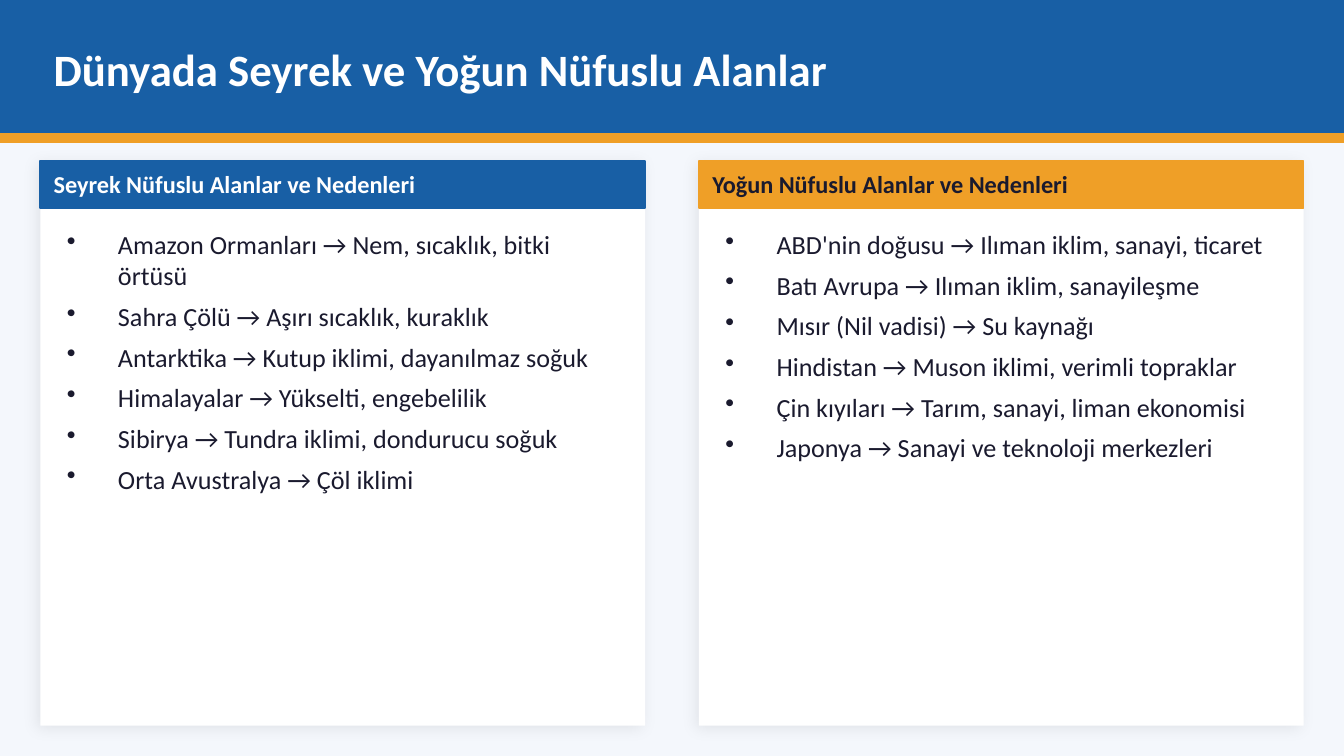
from lxml import etree
from pptx import Presentation
from pptx.dml.color import RGBColor
from pptx.enum.shapes import MSO_SHAPE
from pptx.enum.text import MSO_ANCHOR
from pptx.oxml.ns import qn
from pptx.util import Emu, Inches, Pt

RECTANGLE = MSO_SHAPE.RECTANGLE
MIDDLE = MSO_ANCHOR.MIDDLE

BLUE = RGBColor(0x18, 0x5F, 0xA5)
ORANGE = RGBColor(0xEF, 0x9F, 0x27)
WHITE = RGBColor(0xFF, 0xFF, 0xFF)
INK = RGBColor(0x1A, 0x1A, 0x2E)
PALE = RGBColor(0xF4, 0xF7, 0xFC)
FONT = "Calibri"

# The slide is a grid of square cells, 100 columns wide.
COLUMNS, ROWS = 100, 56.25
CELL = Inches(0.1)
MARGIN, GAP = 3, 4
CARD_TOP, CARD_ROWS = 12, 42
CARD_COLUMNS = (COLUMNS - 2 * MARGIN - GAP) / 2
INSET = 1
BULLET_INDENT = Inches(0.38)

CARDS = [
    ("Seyrek Nüfuslu Alanlar ve Nedenleri", BLUE, WHITE, [
        "Amazon Ormanları → Nem, sıcaklık, bitki örtüsü",
        "Sahra Çölü → Aşırı sıcaklık, kuraklık",
        "Antarktika → Kutup iklimi, dayanılmaz soğuk",
        "Himalayalar → Yükselti, engebelilik",
        "Sibirya → Tundra iklimi, dondurucu soğuk",
        "Orta Avustralya → Çöl iklimi",
    ]),
    ("Yoğun Nüfuslu Alanlar ve Nedenleri", ORANGE, INK, [
        "ABD'nin doğusu → Ilıman iklim, sanayi, ticaret",
        "Batı Avrupa → Ilıman iklim, sanayileşme",
        "Mısır (Nil vadisi) → Su kaynağı",
        "Hindistan → Muson iklimi, verimli topraklar",
        "Çin kıyıları → Tarım, sanayi, liman ekonomisi",
        "Japonya → Sanayi ve teknoloji merkezleri",
    ]),
]


def cells(*counts):
    return [Emu(round(count * CELL)) for count in counts]


def add_panel(slide, box, fill, outlined=True):
    panel = slide.shapes.add_shape(RECTANGLE, *cells(*box))
    panel.shadow.inherit = False
    panel.fill.solid()
    panel.fill.fore_color.rgb = fill
    if outlined:
        panel.line.color.rgb = fill
        panel.line.width = Pt(1)
    else:
        panel.line.fill.background()
    return panel


def add_soft_shadow(panel):
    effects = panel._element.spPr.find(qn("a:effectLst"))
    shadow = etree.SubElement(
        effects, qn("a:outerShdw"), blurRad=str(Pt(8)), dist=str(Pt(2)),
        dir=str(135 * 60000), algn="bl", rotWithShape="0")
    color = etree.SubElement(shadow, qn("a:srgbClr"), val="000000")
    etree.SubElement(color, qn("a:alpha"), val="8000")


def add_run(paragraph, text, size, color, bold=False):
    run = paragraph.add_run()
    run.text = text
    run.font.name = FONT
    run.font.size = Pt(size)
    run.font.bold = bold
    run.font.color.rgb = color


def add_heading(slide, box, text, size, color):
    frame = slide.shapes.add_textbox(*cells(*box)).text_frame
    frame.word_wrap = True
    frame.vertical_anchor = MIDDLE
    frame.margin_left = frame.margin_right = 0
    frame.margin_top = frame.margin_bottom = 0
    add_run(frame.paragraphs[0], text, size, color, bold=True)


def add_bullets(slide, box, items):
    frame = slide.shapes.add_textbox(*cells(*box)).text_frame
    frame.word_wrap = True
    for index, item in enumerate(items):
        paragraph = frame.add_paragraph() if index else frame.paragraphs[0]
        properties = paragraph._p.get_or_add_pPr()
        properties.set("marL", str(BULLET_INDENT))
        properties.set("indent", str(-BULLET_INDENT))
        etree.SubElement(properties, qn("a:buChar"), char="•")
        paragraph.space_after = Pt(5)
        add_run(paragraph, item, 14, INK)


def add_header(slide, box, title):
    """Place the title band with its accent stripe along the lower edge."""
    left, top, width, height = box
    add_panel(slide, box, BLUE)
    add_panel(slide, (left, top + height, width, 0.6), ORANGE)
    add_heading(slide, (left + 4, top + 1, width - 8, height - 1.8),
                title, 24, WHITE)


def add_card(slide, box, title, band_color, title_color, items):
    left, top, width, height = box
    text_left, text_width = left + INSET, width - 2 * INSET
    add_soft_shadow(add_panel(slide, box, WHITE, outlined=False))
    add_panel(slide, (left, top, width, 3.5), band_color)
    add_heading(slide, (text_left, top + 0.2, text_width, 3),
                title, 13, title_color)
    add_bullets(slide, (text_left, top + 4.5, text_width, height - 6), items)


def main():
    deck = Presentation()
    deck.slide_width, deck.slide_height = cells(COLUMNS, ROWS)
    slide = deck.slides.add_slide(deck.slide_layouts[6])
    slide.background.fill.solid()
    slide.background.fill.fore_color.rgb = PALE

    add_header(slide, (0, 0, COLUMNS, 10),
               "Dünyada Seyrek ve Yoğun Nüfuslu Alanlar")
    for index, card in enumerate(CARDS):
        left = MARGIN + index * (CARD_COLUMNS + GAP)
        add_card(slide, (left, CARD_TOP, CARD_COLUMNS, CARD_ROWS), *card)
    deck.save("out.pptx")


if __name__ == "__main__":
    main()
